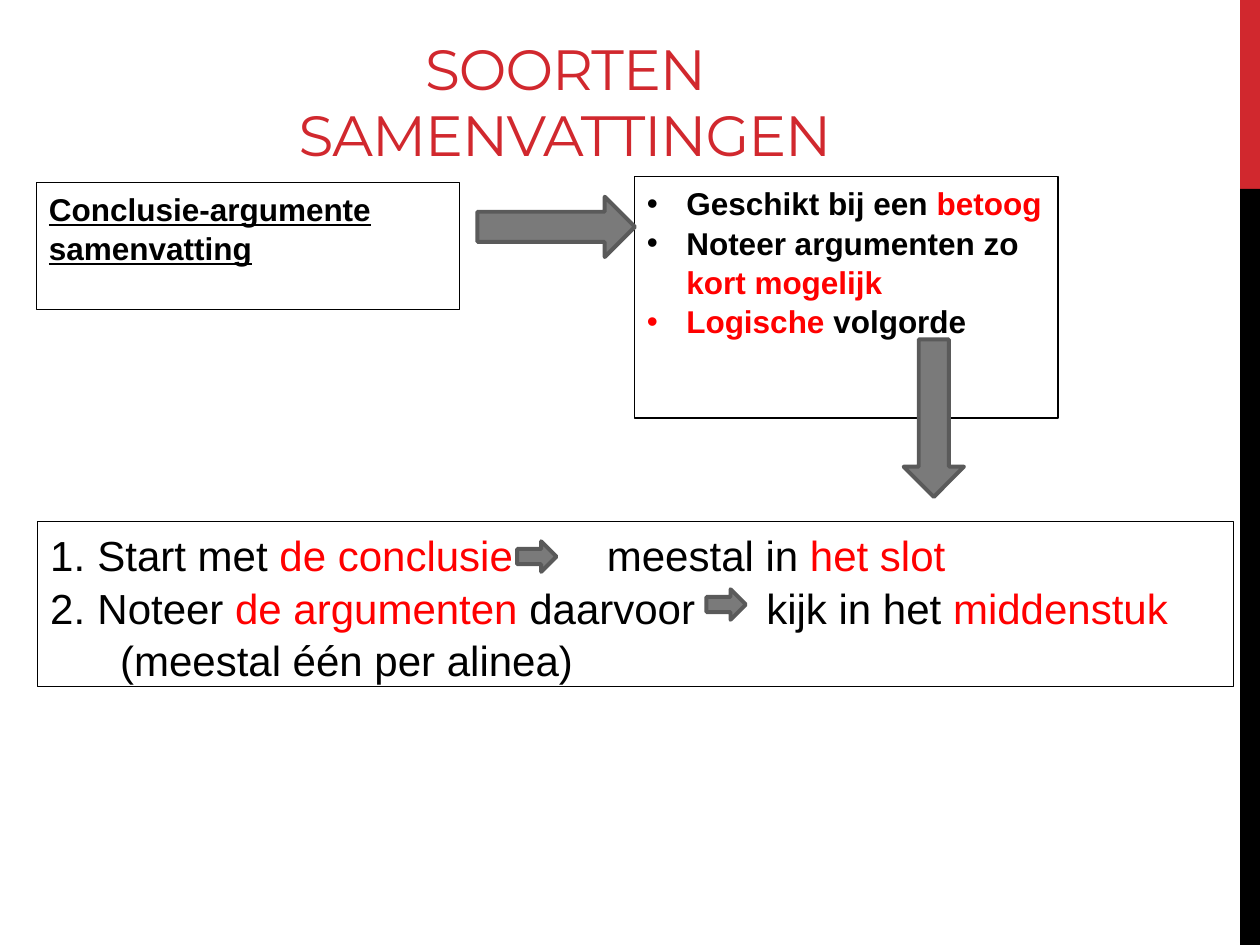
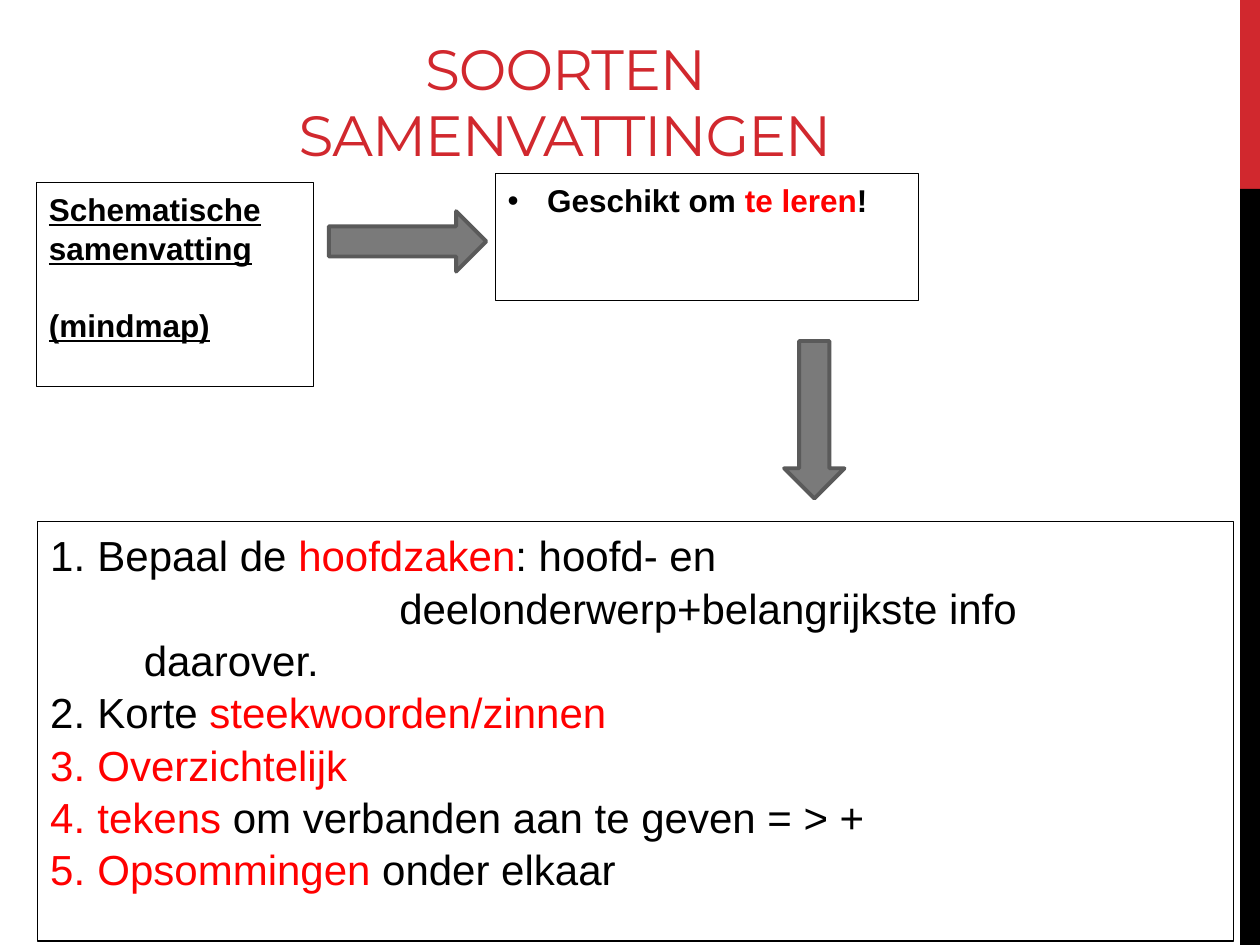
from lxml import etree
from pptx import Presentation
from pptx.dml import color
from pptx.enum import shapes, text
from pptx.oxml import ns
from pptx.util import Pt

COLORS = {
    "accent": "D1282E",
    "black": "000000",
    "red": "FF0000",
    "arrow": "7A7A7A",
    "arrow_edge": "5A5A5A",
}
TITLE = "SOORTEN SAMENVATTINGEN"
BANDS = [("accent", 0, 108), ("black", 108, 432)]
LONG_ARROW = (90, 34.5)
SHORT_ARROW = (22.5, 17.5)
STEPS_LEFT, STEPS_TOP, STEPS_WIDTH = 21.6, 298, 683.2
HEADING = {"size": 18, "bold": True, "underline": True}
BULLET = {"size": 18, "bold": True, "indent": 22.5, "hanging": True, "bullet": "•"}
STEP = {"size": 24, "indent": 27, "hanging": True}
CONTINUED = {"size": 24}

SLIDES = [
    {
        "kind": {
            "at": (20.9, 104.2, 241.6, 72.7),
            "paragraphs": [(HEADING, [("Conclusie-argumente samenvatting", "black")])],
        },
        "use": {
            "at": (362.6, 101, 242, 138),
            "paragraphs": [
                (BULLET, [("Geschikt bij een ", "black"), ("betoog", "red")]),
                (BULLET, [("Noteer argumenten zo ", "black"), ("kort mogelijk", "red")]),
                (BULLET, [("Logische", "red"), (" volgorde", "black")]),
            ],
        },
        "steps": {
            "height": 94.3,
            "paragraphs": [
                (STEP | {"start": 1}, [
                    ("Start met ", "black"), ("de conclusie", "red"), (" ", "black", 47),
                    ("meestal in ", "black"), ("het slot", "red"),
                ]),
                (STEP | {"start": 1}, [
                    ("Noteer ", "black"), ("de argumenten ", "red"), ("daarvoor", "black"),
                    (" ", "black", 34), ("kijk in het ", "black"), ("middenstuk", "red"),
                ]),
                (CONTINUED | {"indent": 40}, [("(meestal één per alinea)", "black")]),
            ],
        },
        "arrows": [
            (272.8, 112.4, LONG_ARROW, 0),
            (488.6, 221.7, LONG_ARROW, 90),
            (403.7, 336.7, SHORT_ARROW, 0),
            (295.5, 309.3, SHORT_ARROW, 0),
        ],
    },
    {
        "kind": {
            "at": (20.9, 104.2, 158.2, 116.6),
            "paragraphs": [
                (HEADING, [("Schematische samenvatting", "black")]),
                (HEADING | {"before": 21.5}, [("(mindmap)", "black")]),
            ],
        },
        "use": {
            "at": (283, 99.2, 242, 72.7),
            "paragraphs": [
                (BULLET, [("Geschikt om ", "black"), ("te leren", "red"), ("!", "black")]),
            ],
        },
        "steps": {
            "height": 239.8,
            "paragraphs": [
                (STEP | {"start": 1}, [
                    ("Bepaal de ", "black"), ("hoofdzaken", "red"), (": hoofd- en", "black"),
                ]),
                (CONTINUED | {"indent": 199.5}, [("deelonderwerp+belangrijkste info", "black")]),
                (CONTINUED | {"indent": 53.5}, [("daarover.", "black")]),
                (STEP | {"start": 2}, [("Korte ", "black"), ("steekwoorden/zinnen", "red")]),
                (STEP | {"start": 2}, [("Overzichtelijk", "red")]),
                (STEP | {"start": 2}, [
                    ("tekens ", "red"), ("om verbanden aan te geven = > +", "black"),
                ]),
                (STEP | {"start": 2}, [("Opsommingen", "red"), (" onder elkaar", "black")]),
            ],
        },
        "arrows": [
            (187.9, 120.7, LONG_ARROW, 0),
            (420.3, 222.6, LONG_ARROW, 90),
        ],
    },
]


def rgb(name):
    return color.RGBColor.from_string(COLORS[name])


def add_preset(slide, preset, box, fill):
    shape = slide.shapes.add_shape(preset, *map(Pt, box))
    shape.shadow.inherit = False
    shape.fill.solid()
    shape.fill.fore_color.rgb = rgb(fill)
    return shape


def add_run(paragraph, wording, color_name, size, font="Arial", spacing=0):
    run = paragraph.add_run()
    run.text = wording
    run.font.name = font
    run.font.size = Pt(size)
    run.font.color.rgb = rgb(color_name)
    if spacing:
        run.font._element.set("spc", str(round(spacing * 100)))
    return run


def format_paragraph(paragraph, style):
    paragraph.line_spacing = 1.045
    paragraph.space_before = Pt(style.get("before", 0))
    properties = paragraph._p.get_or_add_pPr()
    indent = style.get("indent", 0)
    properties.set("marL", str(Pt(indent)))
    properties.set("indent", str(Pt(-indent if style.get("hanging") else 0)))
    if "bullet" in style:
        etree.SubElement(properties, ns.qn("a:buFont"), typeface="Arial")
        etree.SubElement(properties, ns.qn("a:buChar"), char=style["bullet"])
    elif "start" in style:
        etree.SubElement(properties, ns.qn("a:buFont"), typeface="Arial")
        etree.SubElement(
            properties, ns.qn("a:buAutoNum"), type="arabicPeriod", startAt=str(style["start"])
        )
    else:
        etree.SubElement(properties, ns.qn("a:buNone"))


def add_text_box(slide, box, paragraphs):
    shape = slide.shapes.add_textbox(*map(Pt, box))
    shape.line.color.rgb = rgb("black")
    shape.line.width = Pt(0.75)
    frame = shape.text_frame
    frame.word_wrap = True
    for index, (style, runs) in enumerate(paragraphs):
        paragraph = frame.add_paragraph() if index else frame.paragraphs[0]
        format_paragraph(paragraph, style)
        for wording, color_name, *spacing in runs:
            run = add_run(paragraph, wording, color_name, style["size"], spacing=sum(spacing))
            run.font.bold = style.get("bold", False)
            run.font.underline = style.get("underline", False)


def add_title(slide):
    frame = slide.shapes.add_textbox(Pt(95), Pt(31), Pt(455.8), Pt(69.8)).text_frame
    frame.word_wrap = True
    frame.vertical_anchor = text.MSO_ANCHOR.BOTTOM
    paragraph = frame.paragraphs[0]
    paragraph.alignment = text.PP_ALIGN.CENTER
    paragraph.line_spacing = 0.97
    add_run(paragraph, TITLE, "accent", 32.4, "Montserrat", -0.6)


def add_arrow(slide, left, top, size, rotation):
    arrow = add_preset(slide, shapes.MSO_SHAPE.RIGHT_ARROW, (left, top, *size), "arrow")
    arrow.line.color.rgb = rgb("arrow_edge")
    arrow.line.width = Pt(2.25)
    arrow.rotation = rotation


def add_summary_slide(presentation, content):
    slide = presentation.slides.add_slide(presentation.slide_layouts[6])
    for fill, top, height in BANDS:
        band = add_preset(slide, shapes.MSO_SHAPE.RECTANGLE, (708.7, top, 11.3, height), fill)
        band.line.fill.background()
    add_title(slide)
    for part in ("kind", "use"):
        add_text_box(slide, content[part]["at"], content[part]["paragraphs"])
    steps = content["steps"]
    add_text_box(
        slide, (STEPS_LEFT, STEPS_TOP, STEPS_WIDTH, steps["height"]), steps["paragraphs"]
    )
    for arrow in content["arrows"]:
        add_arrow(slide, *arrow)


def main():
    presentation = Presentation()
    presentation.slide_width = Pt(720)
    presentation.slide_height = Pt(540)
    for content in SLIDES:
        add_summary_slide(presentation, content)
    presentation.save("out.pptx")


if __name__ == "__main__":
    main()
